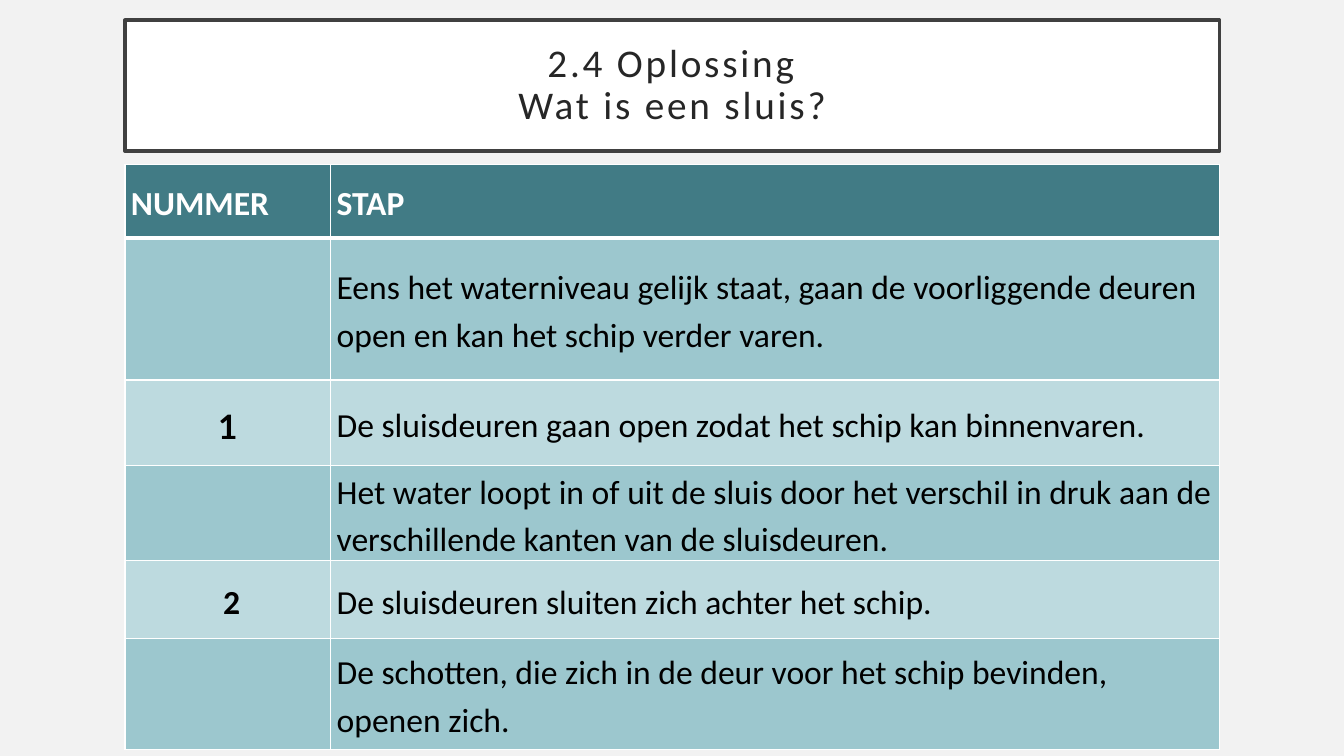
from collections import namedtuple

from lxml import etree
from pptx import Presentation
from pptx.dml.color import RGBColor
from pptx.enum.text import MSO_ANCHOR, MSO_AUTO_SIZE, PP_ALIGN
from pptx.oxml.ns import qn
from pptx.util import Pt

MIDDLE = MSO_ANCHOR.MIDDLE
NO_FIT = MSO_AUTO_SIZE.NONE
LEFT, CENTER = PP_ALIGN.LEFT, PP_ALIGN.CENTER
TITLE_ONLY = 5

Box = namedtuple("Box", "left top width height")
TITLE_BOX = Box(89.3, 14.4, 781.9, 93.6)
TABLE_BOX = Box(89.3, 117.4, 781.9, 416.2)

TITLE_LINES = ["2.4 Oplossing", "Wat is een sluis?"]
HEADINGS = ["NUMMER", "STAP"]
STEPS = [
    ("", "Eens het waterniveau gelijk staat, gaan de voorliggende deuren open en kan het schip verder varen."),
    ("1", "De sluisdeuren gaan open zodat het schip kan binnenvaren."),
    ("", "Het water loopt in of uit de sluis door het verschil in druk aan de verschillende kanten van de sluisdeuren."),
    (" 2", "De sluisdeuren sluiten zich achter het schip."),
    ("", "De schotten, die zich in de deur voor het schip bevinden, openen zich."),
]
NUMBER_WIDTH = 146.9
ROW_HEIGHTS = [52.6, 101.5, 61.2, 66.2, 55.4, 79.2]
HEADER_FILL = "417B85"
BAND_FILLS = ["9CC7CE", "BDDADF"]


def color(code):
    return RGBColor.from_string(code)


def paint(fill, code):
    fill.solid()
    fill.fore_color.rgb = color(code)


def add_span(para, text, size, code, bold=False, font="Calibri"):
    span = para.add_run()
    span.text = text
    span.font.name = font
    span.font.size = Pt(size)
    span.font.bold = bold
    span.font.color.rgb = color(code)
    return span


def add_title(page, box):
    title = page.shapes.title
    title.left, title.top, title.width, title.height = map(Pt, box)
    paint(title.fill, "FFFFFF")
    title.line.color.rgb = color("404040")
    title.line.width = Pt(2.5)
    frame = title.text_frame
    frame.word_wrap = True
    frame.auto_size = NO_FIT
    frame.vertical_anchor = MIDDLE
    frame.margin_left = frame.margin_right = Pt(14.4)
    frame.margin_top = frame.margin_bottom = Pt(14.4)
    para = frame.paragraphs[0]
    para.alignment = CENTER
    para.line_spacing = 0.9
    for index, line in enumerate(TITLE_LINES):
        if index:
            para.add_line_break()
        span = add_span(para, line, 28, "262626")
        span.font._element.set("spc", "200")


def add_borders(cell, widths):
    properties = cell._tc.get_or_add_tcPr()
    for side, width in widths.items():
        line = etree.SubElement(properties, qn(f"a:ln{side}"), w=str(Pt(width)))
        fill = etree.SubElement(line, qn("a:solidFill"))
        etree.SubElement(fill, qn("a:srgbClr"), val="FFFFFF")


def fill_cell(cell, text, row, column):
    header = row == 0
    add_borders(cell, {"L": 1, "R": 1, "T": 3 if row == 1 else 1, "B": 3 if header else 1})
    paint(cell.fill, HEADER_FILL if header else BAND_FILLS[(row - 1) % 2])
    cell.vertical_anchor = MIDDLE
    cell.margin_left = cell.margin_right = Pt(4.3)
    cell.margin_top = cell.margin_bottom = 0
    if not text:
        return
    para = cell.text_frame.paragraphs[0]
    para.alignment = LEFT if header or column else CENTER
    para.line_spacing = 1.16
    para.space_after = Pt(8)
    add_span(para, text, 24, "FFFFFF" if header else "000000",
             bold=header or column == 0, font="Lato" if text == "1" else "Calibri")


def add_steps(page, box):
    rows = [HEADINGS, *STEPS]
    table = page.shapes.add_table(len(rows), len(HEADINGS), *map(Pt, box)).table
    table.columns[0].width = Pt(NUMBER_WIDTH)
    table.columns[1].width = Pt(box.width - NUMBER_WIDTH)
    for row, (texts, height) in enumerate(zip(rows, ROW_HEIGHTS)):
        table.rows[row].height = Pt(height)
        for column, text in enumerate(texts):
            fill_cell(table.cell(row, column), text, row, column)


def main():
    deck = Presentation()
    deck.slide_width, deck.slide_height = Pt(960), Pt(540)
    page = deck.slides.add_slide(deck.slide_layouts[TITLE_ONLY])
    paint(page.background.fill, "F2F2F2")
    add_title(page, TITLE_BOX)
    add_steps(page, TABLE_BOX)
    deck.save("out.pptx")


if __name__ == "__main__":
    main()
